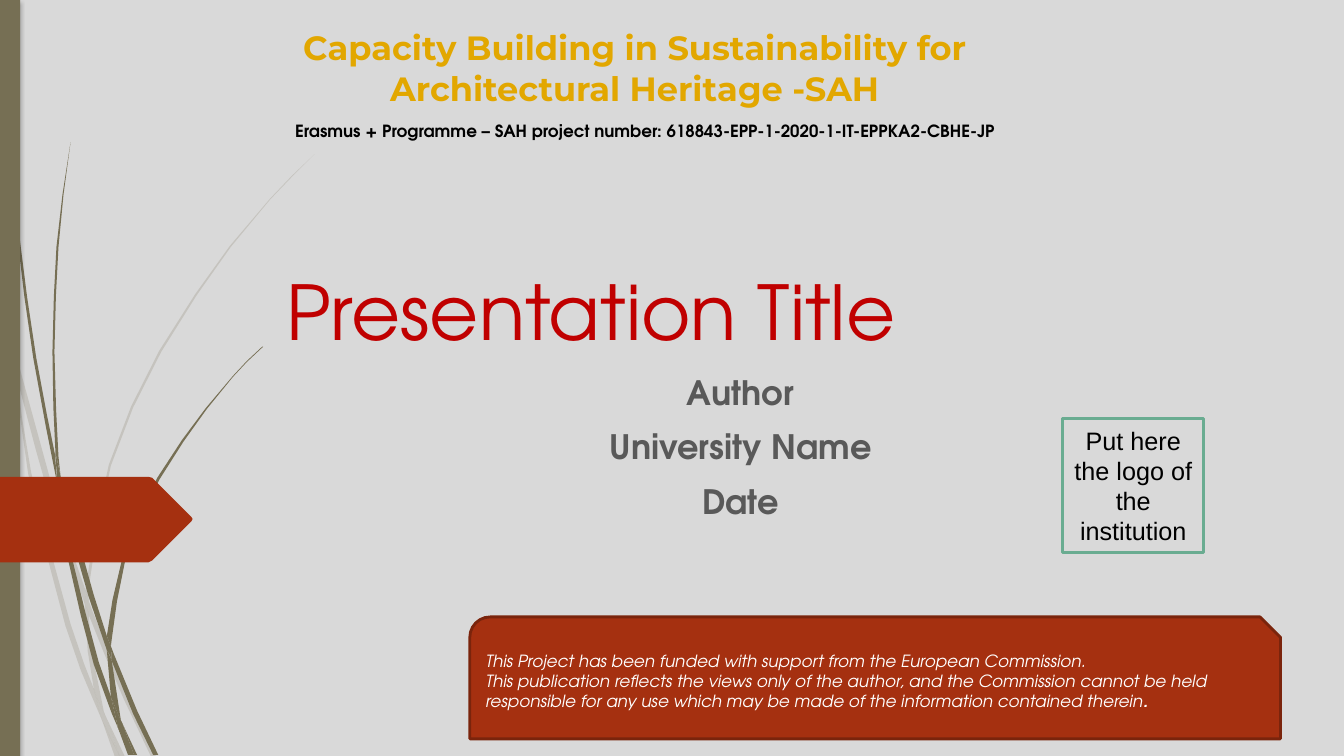
import pptx
import pptx.dml.color
import pptx.enum.shapes
import pptx.enum.text
import pptx.oxml
import pptx.oxml.ns
import pptx.util

Inches = pptx.util.Inches
Pt = pptx.util.Pt
SHAPE = pptx.enum.shapes.MSO_SHAPE
ALIGN = pptx.enum.text.PP_ALIGN
ANCHOR = pptx.enum.text.MSO_ANCHOR

OLIVE, RUST, GREY = "766F54", "A53010", "D9D9D9"
DISPLAY = "TeX Gyre Adventor"

# Each blade of grass has two edges, in inches: one going out, one coming back
PALE_BLADES = [
    ([(0.11, 3.5), (0.08, 3.22), (0, 2.82)], [(0, 2.99), (0.1, 3.44), (0.11, 3.5)]),
    ([(0.14, 3.45), (0.17, 3.76), (0.57, 5.22), (0.84, 5.99)],
     [(0.85, 5.86), (0.62, 5.2), (0.14, 3.45)]),
    ([(0.88, 5.96), (0.88, 6.1), (1.23, 6.94), (1.5, 7.51)],
     [(1.55, 7.51), (1.27, 6.91), (0.92, 6.07), (0.88, 5.96)]),
    ([(1.05, 7.11), (1.19, 7.51)], [(1.24, 7.51), (1.05, 7.11)]),
    ([(0.11, 3.5), (0.28, 4.7), (0.65, 6.21), (0.92, 6.93), (1.01, 7.14)],
     [(0.99, 7.07), (0.93, 6.83), (0.7, 6.19), (0.31, 4.69), (0.17, 3.76), (0.11, 3.5)]),
    ([(0.84, 5.99), (0.87, 6.46), (0.93, 6.83), (0.96, 6.92), (1.05, 7.11)],
     [(1.03, 7.06), (0.91, 6.46), (0.88, 6.1), (0.88, 6.08), (0.84, 5.99)]),
    ([(0.88, 5.96), (0.88, 5.84), (1.1, 4.62), (1.6, 3.49), (2.29, 2.45), (2.68, 1.98),
      (2.9, 1.75), (3.12, 1.53)],
     [(3.12, 1.53), (2.89, 1.75), (2.68, 1.97), (2.28, 2.44), (1.58, 3.48), (1.08, 4.61),
      (0.85, 5.84), (0.85, 5.86), (0.88, 5.96)]),
    ([(1.01, 7.14), (1.14, 7.51)], [(1.19, 7.51), (1.01, 7.14)]),
    ([(0.88, 6.08), (0.88, 6.1), (0.88, 5.96), (0.85, 5.86)], [(0.84, 5.99), (0.88, 6.08)]),
    ([(0.93, 6.83), (0.99, 7.07), (1.01, 7.14), (1.19, 7.51)],
     [(1.19, 7.51), (1.05, 7.11), (0.96, 6.92), (0.93, 6.83)]),
]
DARK_BLADES = [
    ([(0.03, 0), (0.04, 0.48), (0.07, 1.1), (0.17, 2.33), (0.33, 3.55), (0.56, 4.76),
      (0.57, 4.81)],
     [(0.55, 4.57), (0.55, 4.53), (0.36, 3.55), (0.19, 2.32), (0.08, 1.09), (0.05, 0.48),
      (0.04, 0)]),
    ([(0.6, 4.72), (0.64, 5.05), (0.88, 5.92), (1.06, 6.45)],
     [(1.06, 6.33), (1.06, 6.31), (0.93, 5.9), (0.6, 4.72)]),
    ([(1.1, 6.41), (1.11, 6.56), (1.32, 7.08), (1.52, 7.49)],
     [(1.57, 7.49), (1.36, 7.05), (1.13, 6.49), (1.1, 6.41)]),
    ([(0.57, 4.77), (0.68, 5.57), (0.93, 6.59), (1.11, 7.08), (1.17, 7.22)],
     [(1.16, 7.17), (1.1, 6.91), (0.98, 6.57), (0.72, 5.56), (0.64, 5.05), (0.57, 4.77)]),
    ([(0.6, 4.72), (0.58, 4.53), (0.54, 3.49), (0.58, 2.45), (0.63, 1.93), (0.7, 1.41)],
     [(0.7, 1.41), (0.62, 1.93), (0.56, 2.45), (0.52, 3.49), (0.55, 4.49), (0.6, 4.71)]),
    ([(1.22, 7.19), (1.33, 7.49)], [(1.36, 7.49), (1.22, 7.19)]),
    ([(0.57, 4.77), (0.64, 5.05)], [(0.6, 4.72), (0.55, 4.49), (0.55, 4.53), (0.57, 4.77)]),
    ([(1.1, 6.41), (1.11, 6.33), (1.25, 5.52), (1.58, 4.76), (2.05, 4.06), (2.31, 3.74),
      (2.45, 3.59), (2.61, 3.44)],
     [(2.6, 3.44), (2.45, 3.58), (2.31, 3.73), (2.04, 4.05), (1.56, 4.74), (1.22, 5.51),
      (1.06, 6.31), (1.1, 6.41)]),
    ([(1.17, 7.22), (1.27, 7.49)], [(1.31, 7.49), (1.17, 7.22)]),
    ([(1.06, 6.45), (1.1, 6.91), (1.16, 7.06), (1.22, 7.19)],
     [(1.2, 7.15), (1.11, 6.56), (1.09, 6.51), (1.06, 6.45)]),
    ([(1.06, 6.45), (1.09, 6.5), (1.11, 6.56)],
     [(1.1, 6.41), (1.06, 6.31), (1.06, 6.33), (1.06, 6.45)]),
    ([(1.1, 6.91), (1.16, 7.17), (1.17, 7.22), (1.3, 7.49)],
     [(1.33, 7.49), (1.22, 7.19), (1.16, 7.06), (1.1, 6.91)]),
]
ARROW_TAG = [(0, 4.73), (1.47, 4.73), (1.51, 4.74), (1.9, 5.13), (1.91, 5.15),
             (1.9, 5.17), (1.51, 5.56), (1.47, 5.58), (0, 5.58)]


def rgb(value):
    return pptx.dml.color.RGBColor.from_string(value)


def smooth(edge):
    """Add a rounded midpoint to each long span that has neighbours on both sides."""
    curve = [edge[0]]
    for i, (start, end) in enumerate(zip(edge, edge[1:])):
        if 0 < i < len(edge) - 2 and abs(end[1] - start[1]) > 0.6:
            curve.append(tuple((9 * (a + b) - before - after) / 16 for a, b, before, after
                               in zip(start, end, edge[i - 1], edge[i + 2])))
        curve.append(end)
    return curve


def paint(shape, fill, line=None):
    shape.shadow.inherit = False
    shape.fill.solid()
    shape.fill.fore_color.rgb = rgb(fill)
    if line:
        shape.line.color.rgb = rgb(line)
        shape.line.width = Pt(2)
    else:
        shape.line.fill.background()


def add_outline(slide, points, fill, opacity=100):
    corners = [(Inches(x), Inches(y)) for x, y in dict.fromkeys(points)]
    builder = slide.shapes.build_freeform(*corners[0], scale=1.0)
    builder.add_line_segments(corners[1:], close=True)
    outline = builder.convert_to_shape()
    paint(outline, fill)
    if opacity < 100:
        color = outline.element.spPr.find(".//" + pptx.oxml.ns.qn("a:srgbClr"))
        color.append(pptx.oxml.parse_xml(
            f'<a:alpha {pptx.oxml.ns.nsdecls("a")} val="{opacity * 1000}"/>'))


def add_panel(slide, kind, box, fill, line=None):
    panel = slide.shapes.add_shape(kind, *map(Inches, box))
    paint(panel, fill, line)
    return panel


def add_shadow(shape):
    effects = shape.element.spPr.find(pptx.oxml.ns.qn("a:effectLst"))
    effects.append(pptx.oxml.parse_xml(
        f'<a:outerShdw {pptx.oxml.ns.nsdecls("a")} blurRad="{Pt(3)}" dist="{Pt(2)}" '
        'dir="5400000" rotWithShape="0"><a:srgbClr val="000000">'
        '<a:alpha val="25000"/></a:srgbClr></a:outerShdw>'))


def write(shape, lines, color, font, align=ALIGN.LEFT, anchor=ANCHOR.TOP, gap=0):
    frame = shape.text_frame
    frame.word_wrap = True
    frame.vertical_anchor = anchor
    for i, line in enumerate(lines):
        paragraph = frame.paragraphs[0] if i == 0 else frame.add_paragraph()
        paragraph.alignment = align
        if i and gap:
            paragraph.space_before = Pt(gap)
        for text, extra in [(line, {})] if isinstance(line, str) else line:
            run = paragraph.add_run()
            run.text = text
            run.font.color.rgb = rgb(color)
            for key, value in {**font, **extra}.items():
                setattr(run.font, key, value)


def add_text(slide, box, lines, color, font, **layout):
    write(slide.shapes.add_textbox(*map(Inches, box)), lines, color, font, **layout)


def main():
    deck = pptx.Presentation()
    deck.slide_width, deck.slide_height = Inches(13.33), Inches(7.5)
    slide = deck.slides.add_slide(deck.slide_layouts[6])
    slide.background.fill.solid()
    slide.background.fill.fore_color.rgb = rgb(GREY)

    # Grass, side bar and arrow tag
    for blades, opacity in ((PALE_BLADES, 20), (DARK_BLADES, 100)):
        for out, back in blades:
            add_outline(slide, smooth(out) + smooth(back), OLIVE, opacity)
    add_shadow(add_panel(slide, SHAPE.RECTANGLE, (0, 0, 0.2, 7.5), OLIVE))
    add_outline(slide, ARROW_TAG, RUST)

    # Title and author
    add_text(slide, (2.74, 2.27, 9.75, 1.31), ["Presentation Title"], "C00000",
             {"name": DISPLAY, "size": Pt(54)}, anchor=ANCHOR.BOTTOM)
    add_text(slide, (2.47, 3.64, 9.75, 1.88), ["Author", "University Name", "Date"], "595959",
             {"name": DISPLAY, "size": Pt(24), "bold": True}, align=ALIGN.CENTER, gap=10)

    # Project number
    add_text(slide, (2.35, 1.15, 8.1, 0.3),
             ["Erasmus + Programme – SAH project number: 618843-EPP-1-2020-1-IT-EPPKA2-CBHE-JP"],
             "000000", {"name": DISPLAY, "size": Pt(12), "bold": True}, align=ALIGN.CENTER)

    # Funding notice
    notice = add_panel(slide, SHAPE.SNIP_ROUND_RECTANGLE, (4.66, 6.12, 8.04, 1.21), RUST, "7A240C")
    write(notice, [
        "This Project has been funded with support from the European Commission.",
        [("This publication reflects the views only of the author, and the Commission cannot be "
          "held responsible for any use which may be made of the information contained therein",
          {}), (".", {"bold": True})],
    ], "FFFFFF", {"name": DISPLAY, "size": Pt(12), "italic": True}, anchor=ANCHOR.MIDDLE)

    # Project name
    add_text(slide, (2.58, 0.22, 7.43, 0.9),
             ["Capacity Building in Sustainability for", "Architectural Heritage -SAH"],
             "E2A700", {"name": "Montserrat", "size": Pt(24), "bold": True}, align=ALIGN.CENTER)

    # Space for the institution
    institution = add_panel(slide, SHAPE.RECTANGLE, (10.54, 4.15, 1.4, 1.33), GREY, "6AAC91")
    write(institution, ["Put here the logo of the institution"], "000000",
          {"name": "Arial", "size": Pt(18)}, align=ALIGN.CENTER, anchor=ANCHOR.MIDDLE)

    deck.save("out.pptx")


if __name__ == "__main__":
    main()
